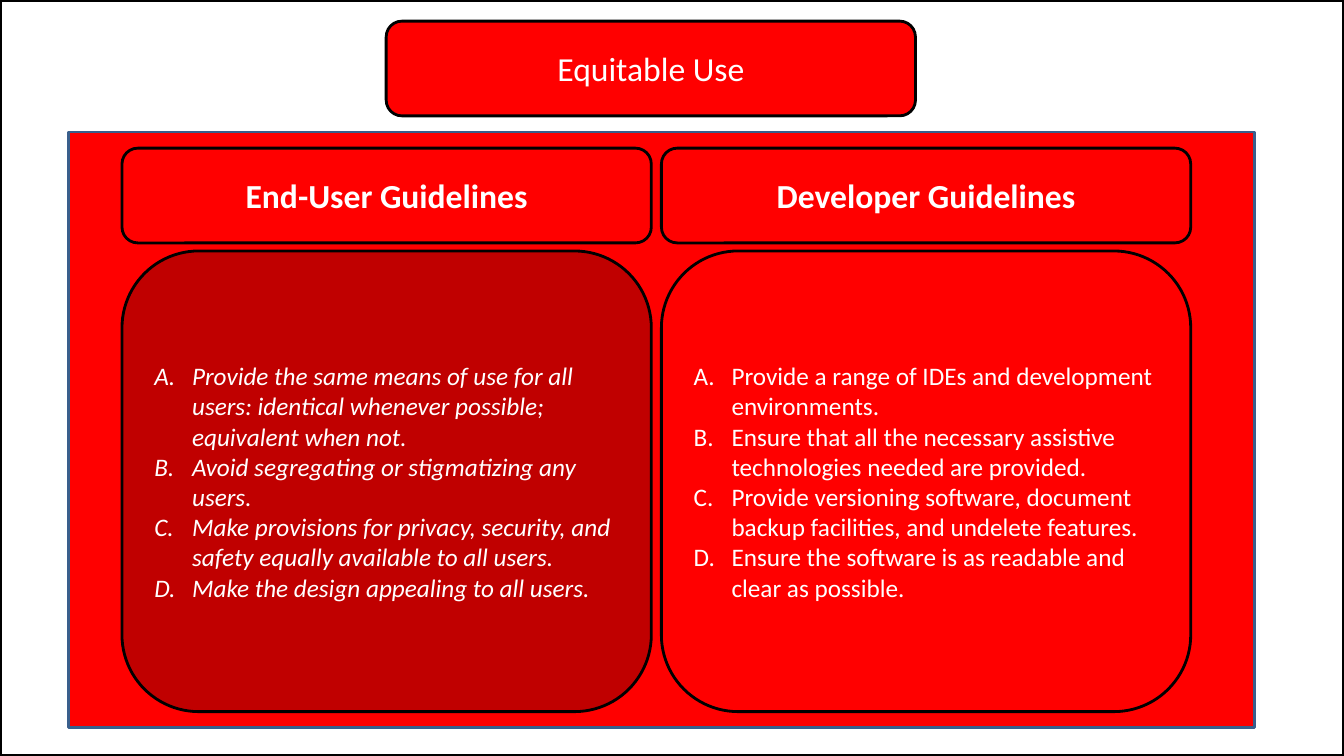
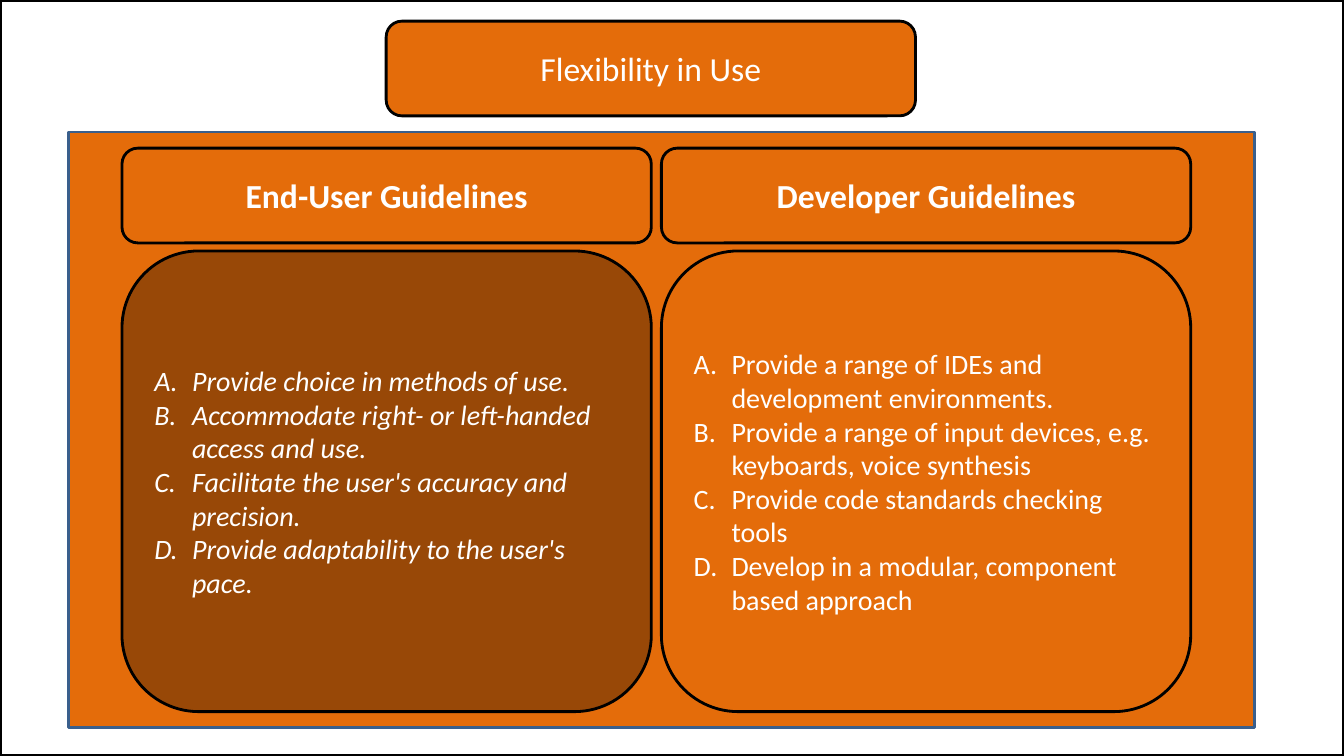
import pptx
import pptx.util
import pptx.dml.color
import pptx.enum.shapes
import pptx.enum.text
import pptx.oxml.ns
import lxml.etree
from dataclasses import dataclass

Inches = pptx.util.Inches
Pt = pptx.util.Pt
Shapes = pptx.enum.shapes.MSO_SHAPE
Align = pptx.enum.text.PP_ALIGN

# Content
HEADINGS = ("End-User Guidelines", "Developer Guidelines")
SLIDES = [
    {
        "title": "Equitable Use", "color": "FF0000", "dark": "C00000", "list_size": 18,
        "lists": (
            ["Provide the same means of use for all users: identical whenever possible; equivalent when not.",
             "Avoid segregating or stigmatizing any users.",
             "Make provisions for privacy, security, and safety equally available to all users.",
             "Make the design appealing to all users."],
            ["Provide a range of IDEs and development environments.",
             "Ensure that all the necessary assistive technologies needed are provided.",
             "Provide versioning software, document backup facilities, and undelete features.",
             "Ensure the software is as readable and clear as possible."],
        ),
    },
    {
        "title": "Flexibility in Use", "color": "E46C0A", "dark": "984807", "list_size": 20,
        "lists": (
            ["Provide choice in methods of use.",
             "Accommodate right- or left-handed access and use.",
             "Facilitate the user's accuracy and precision.",
             "Provide adaptability to the user's pace."],
            ["Provide a range of IDEs and development environments.",
             "Provide a range of input devices, e.g. keyboards, voice synthesis",
             "Provide code standards checking tools",
             "Develop in a modular, component based approach"],
        ),
    },
]


@dataclass(frozen=True)
class Theme:
    font: str = "Calibri"
    text: str = "FFFFFF"
    outline: str = "000000"
    panel_outline: str = "3A5F8C"
    heading_size: int = 24
    line_width: int = 2
    frame_width: int = 3


THEME = Theme()

# Layout in inches
SLIDE_WIDTH, SLIDE_HEIGHT = 13.33, 7.5
PANEL = (0.68, 1.31, 11.76, 5.91)
COLUMN_LEFT, COLUMN_WIDTH, COLUMN_GAP = 1.21, 5.25, 0.1
HEADING_TOP, HEADING_HEIGHT = 1.47, 0.94
CARD_TOP, CARD_HEIGHT = 2.49, 4.57
CARD_INSET = 0.22
TITLE_BOX = (3.83, 0.21, COLUMN_WIDTH, HEADING_HEIGHT)
LIST_INDENT = 0.375


def rgb(color):
    return pptx.dml.color.RGBColor.from_string(color)


def place(shape, box):
    for name, value in zip(("left", "top", "width", "height"), box):
        setattr(shape, name, Inches(value))


def add_box(slide, kind, box, fill, outline=THEME.outline, width=THEME.line_width):
    """Add an outlined box behind the slide's placeholders."""
    shape = slide.shapes.add_shape(kind, *map(Inches, box))
    shape.shadow.inherit = False
    if fill:
        shape.fill.solid()
        shape.fill.fore_color.rgb = rgb(fill)
    else:
        shape.fill.background()
    shape.line.color.rgb = rgb(outline)
    shape.line.width = Pt(width)
    slide.shapes.title.element.addprevious(shape.element)
    return shape


def write(shape, lines, size, alignment=Align.CENTER, bold=False, italic=False):
    frame = shape.text_frame
    frame.text = "\n".join(lines)
    frame_format = {
        "word_wrap": True,
        "auto_size": pptx.enum.text.MSO_AUTO_SIZE.NONE,
        "vertical_anchor": pptx.enum.text.MSO_ANCHOR.MIDDLE,
    }
    for name, value in frame_format.items():
        setattr(frame, name, value)
    font_format = {"name": THEME.font, "size": Pt(size), "bold": bold, "italic": italic}
    for paragraph in frame.paragraphs:
        paragraph.alignment = alignment
        paragraph.space_before = Pt(0)
        for run in paragraph.runs:
            for name, value in font_format.items():
                setattr(run.font, name, value)
            run.font.color.rgb = rgb(THEME.text)


def letter_paragraphs(shape):
    """Number the paragraphs A., B., C. with a hanging indent."""
    qualified = pptx.oxml.ns.qn
    for paragraph in shape.text_frame.paragraphs:
        properties = paragraph._p.get_or_add_pPr()
        properties.set("marL", str(Inches(LIST_INDENT)))
        properties.set("indent", str(-Inches(LIST_INDENT)))
        lxml.etree.SubElement(properties, qualified("a:buFont"), typeface=THEME.font)
        lxml.etree.SubElement(properties, qualified("a:buAutoNum"), type="alphaUcPeriod")


def build_slide(presentation, content):
    slide = presentation.slides.add_slide(presentation.slide_layouts.get_by_name("Two Content"))
    color = content["color"]

    # Title and panel
    add_box(slide, Shapes.RECTANGLE, PANEL, color, THEME.panel_outline)
    add_box(slide, Shapes.ROUNDED_RECTANGLE, TITLE_BOX, color)
    title = slide.shapes.title
    place(title, TITLE_BOX)
    write(title, [content["title"]], THEME.heading_size)

    # Guideline columns
    fills = (content["dark"], color)
    for column, (heading, items, fill) in enumerate(zip(HEADINGS, content["lists"], fills)):
        left = COLUMN_LEFT + column * (COLUMN_WIDTH + COLUMN_GAP)
        heading_box = add_box(slide, Shapes.ROUNDED_RECTANGLE,
                              (left, HEADING_TOP, COLUMN_WIDTH, HEADING_HEIGHT), color)
        write(heading_box, [heading], THEME.heading_size, bold=True)
        add_box(slide, Shapes.ROUNDED_RECTANGLE,
                (left, CARD_TOP, COLUMN_WIDTH, CARD_HEIGHT), fill)
        body = slide.placeholders[column + 1]
        place(body, (left + CARD_INSET, CARD_TOP + CARD_INSET,
                     COLUMN_WIDTH - 2 * CARD_INSET, CARD_HEIGHT - 2 * CARD_INSET))
        write(body, items, content["list_size"], Align.LEFT, italic=column == 0)
        letter_paragraphs(body)

    # Slide frame
    add_box(slide, Shapes.RECTANGLE, (0, 0, SLIDE_WIDTH, SLIDE_HEIGHT), None,
            width=THEME.frame_width)


def main():
    presentation = pptx.Presentation()
    presentation.slide_width = Inches(SLIDE_WIDTH)
    presentation.slide_height = Inches(SLIDE_HEIGHT)
    for content in SLIDES:
        build_slide(presentation, content)
    presentation.save("out.pptx")


if __name__ == "__main__":
    main()
